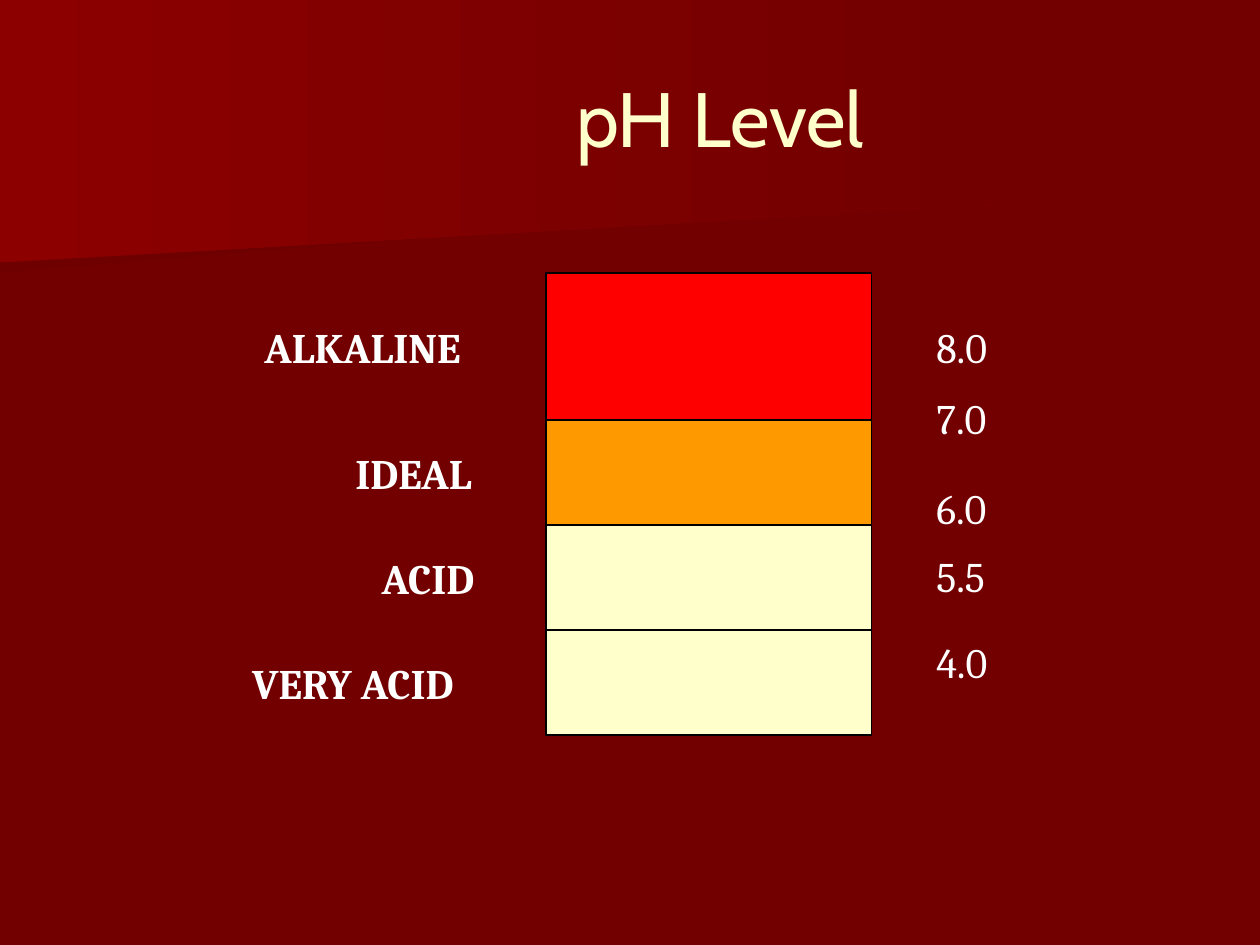
from pptx import Presentation
from pptx.dml.color import RGBColor
from pptx.enum.shapes import MSO_SHAPE
from pptx.enum.text import MSO_ANCHOR, MSO_AUTO_SIZE, PP_ALIGN
from pptx.util import Pt


def rgb(value):
    return RGBColor.from_string(value)


def add_text(paragraph, text, size, font, color, bold=False):
    run = paragraph.add_run()
    run.text = text
    run.font.size = Pt(size)
    run.font.name = font
    run.font.bold = bold
    run.font.color.rgb = rgb(color)


prs = Presentation()
prs.slide_width, prs.slide_height = Pt(720), Pt(540)
slide = prs.slides.add_slide(prs.slide_layouts[5])
shapes = slide.shapes

# Background with two gradient bands across the top
slide.background.fill.solid()
slide.background.fill.fore_color.rgb = rgb("720000")
bands = [
    ("6F0000", [(560, 110), (0, 156), (0, 73), (561, 73), (560, 92)]),
    ("8C0000", [(570, 117), (0, 150), (0, 0), (570, 0)]),
]
for start_color, points in bands:
    outline = shapes.build_freeform(*points[0], scale=Pt(1))
    outline.add_line_segments(points[1:], close=True)
    band = outline.convert_to_shape()
    band.shadow.inherit = False
    band.line.fill.background()
    band.fill.gradient()
    band.fill.gradient_angle = 0
    for stop, color in zip(band.fill.gradient_stops, (start_color, "720000")):
        stop.color.rgb = rgb(color)

# Title, brought in front of the bands
title = shapes.title
title.left, title.top, title.width, title.height = Pt(139), Pt(21.6), Pt(545), Pt(90)
title.text_frame.vertical_anchor = MSO_ANCHOR.MIDDLE
heading = title.text_frame.paragraphs[0]
heading.alignment = PP_ALIGN.CENTER
add_text(heading, "pH Level", 44, "Cabin", "FFFFCC")
shapes._spTree.append(title._element)

# Stacked pH zones, each with its label: fill, height, label, label left, width, top
zones = [
    ("FF0000", 84, "ALKALINE", 144, 142.5, 180),
    ("FF9900", 60, "IDEAL", 196, 91, 252),
    ("FFFFCC", 60, "ACID", 211, 76, 312),
    ("FFFFCC", 60, "VERY ACID", 137, 150, 372),
]
zone_top = 156
for color, height, name, left, width, label_top in zones:
    zone = shapes.add_shape(MSO_SHAPE.RECTANGLE, Pt(312), Pt(zone_top), Pt(186), Pt(height))
    zone.shadow.inherit = False
    zone.fill.solid()
    zone.fill.fore_color.rgb = rgb(color)
    zone.line.color.rgb = rgb("000000")
    zone.line.width = Pt(0.75)
    zone_top += height

    label = shapes.add_textbox(Pt(left), Pt(label_top), Pt(width), Pt(36)).text_frame
    label.word_wrap = False
    label.auto_size = MSO_AUTO_SIZE.SHAPE_TO_FIT_TEXT
    add_text(label.paragraphs[0], name, 24, "Cambria", "FFFFFF", bold=True)

# pH scale values, with the space before each
scale = shapes.add_textbox(Pt(528), Pt(180), Pt(72), Pt(229)).text_frame
scale.word_wrap = True
scale.auto_size = MSO_AUTO_SIZE.SHAPE_TO_FIT_TEXT
values = [("8.0", 0), ("7.0", 12), ("6.0", 22.8), ("5.5", 9.6), ("4.0", 20.4)]
for i, (value, gap) in enumerate(values):
    paragraph = scale.add_paragraph() if i else scale.paragraphs[0]
    paragraph.space_before = Pt(gap)
    add_text(paragraph, value, 24, "Cambria", "FFFFFF")

prs.save("out.pptx")
